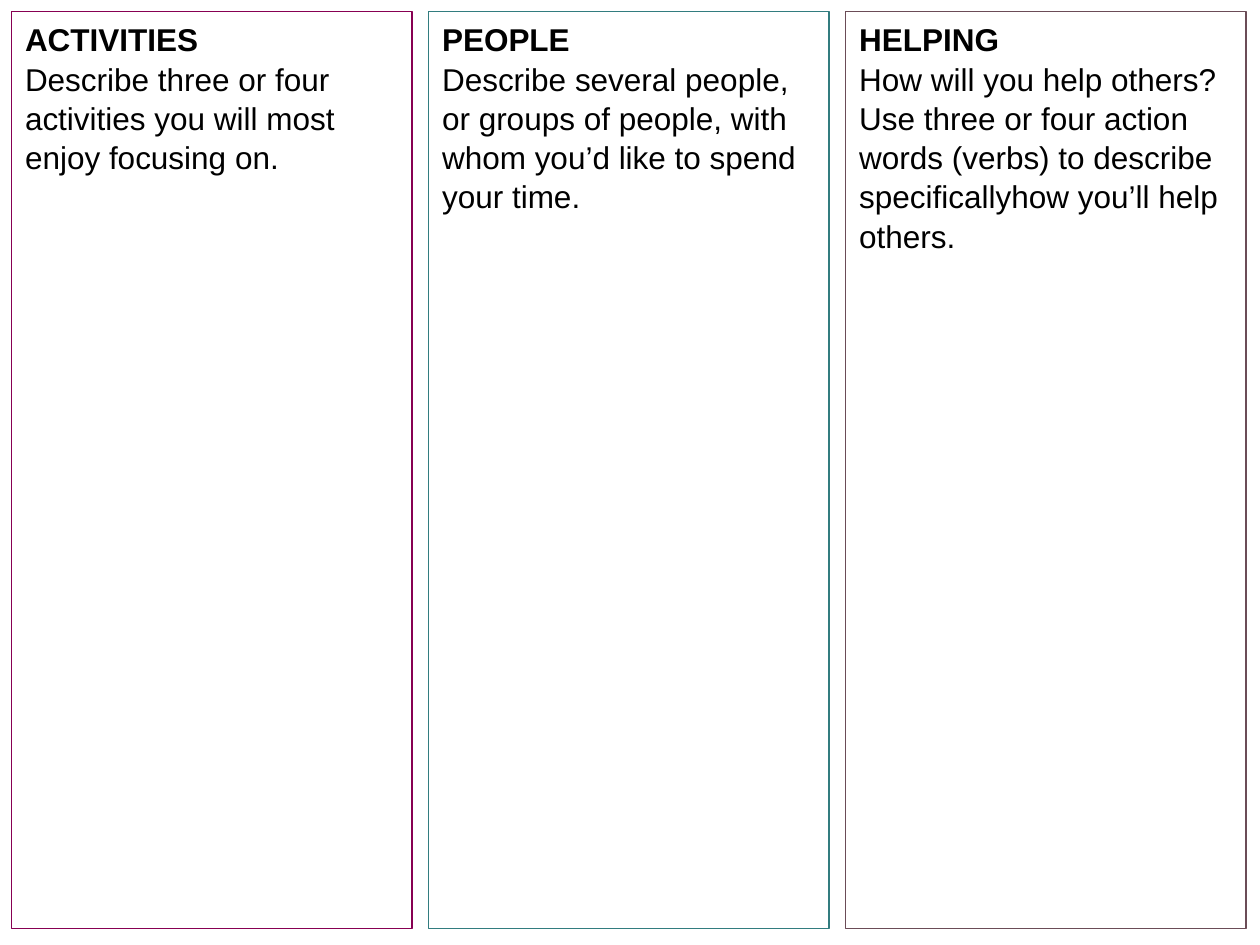
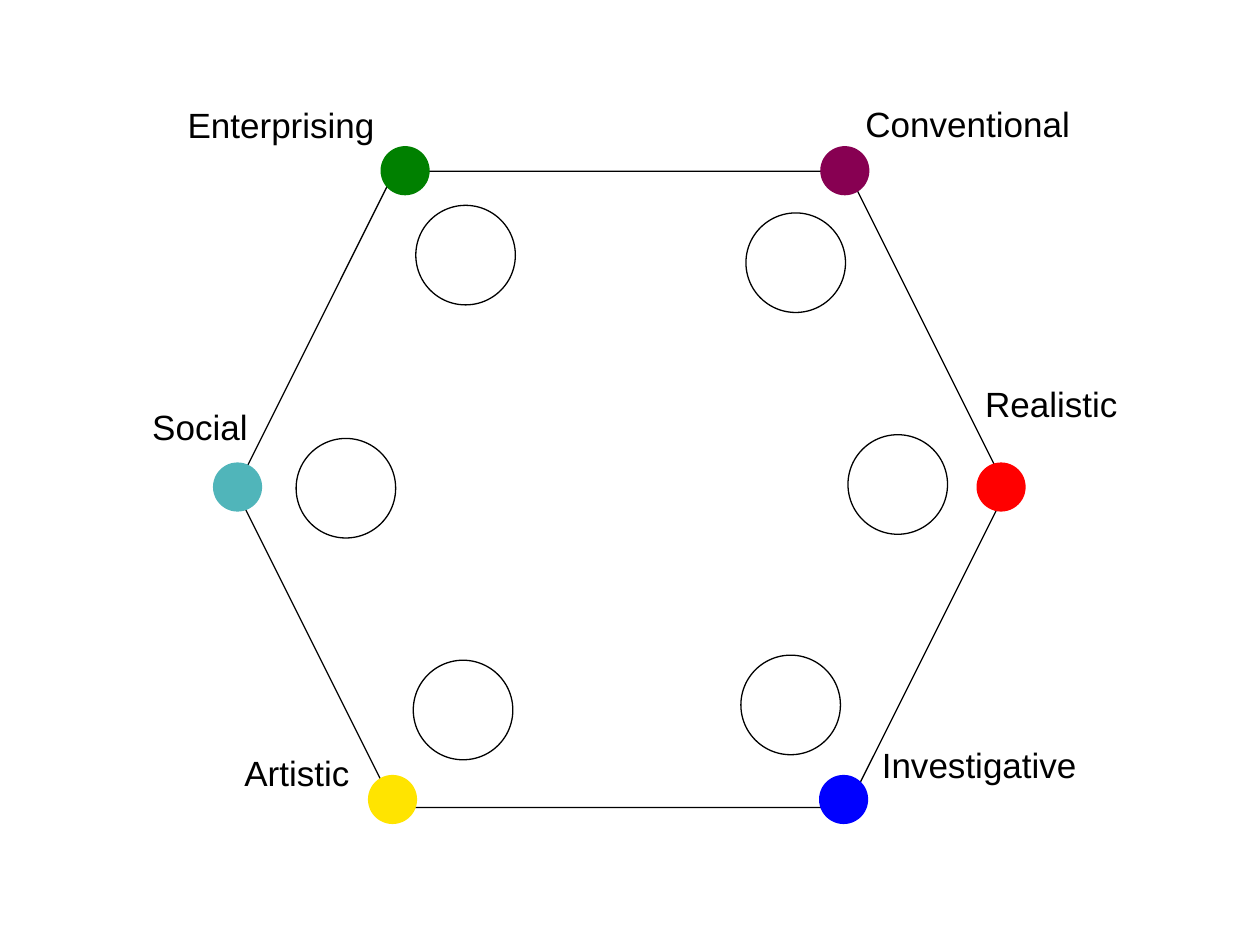
from pptx import Presentation
from pptx.dml.color import RGBColor
from pptx.enum.shapes import MSO_SHAPE as Shape
from pptx.enum.text import MSO_AUTO_SIZE as AutoSize
from pptx.util import Emu, Pt

EMU_PER_PX = 9144  # 100 px to the inch
SLIDE_W, SLIDE_H = 1000, 750
FONT = "Arial"
BLACK, WHITE = "000000", "FFFFFF"
LINE_SPACING = 1.04

COLUMN_LEFT, COLUMN_TOP, COLUMN_PITCH = 9, 9, 331
COLUMN_W, COLUMN_H = 318, 728
PROMPT_W = 308
DOT, RING = 39, 79
LABEL_W, LABEL_H = 209, 44

# heading, prompt, border colour, prompt height
COLUMNS = [
    ("ACTIVITIES", "Describe three or four activities you will most enjoy focusing on.",
     "870052", 131),
    ("PEOPLE", "Describe several people, or groups of people, with whom you’d like "
     "to spend your time.", "327C7F", 162),
    ("HELPING", "How will you help others? Use three or four action words (verbs) "
     "to describe specificallyhow you’ll help others.", "6B4C57", 192),
]

# label, dot colour, then left and top of dot, ring and label
INTERESTS = [
    ("Enterprising", "008000", (302, 116), (330, 163), (139, 76)),
    ("Conventional", "870052", (651, 116), (592, 169), (677, 75)),
    ("Social", "50B5BA", (169, 367), (235, 348), (111, 316)),
    ("Realistic", "FF0000", (775, 367), (673, 345), (772, 297)),
    ("Artistic", "FFE400", (292, 615), (328, 524), (184, 590)),
    ("Investigative", "0000FF", (650, 615), (588, 520), (690, 584)),
]


def px(length):
    return Emu(length * EMU_PER_PX)


def color(hex_code):
    return RGBColor.from_string(hex_code)


def add_figure(slide, preset, left, top, width, height, fill=None, line=None):
    figure = slide.shapes.add_shape(preset, px(left), px(top), px(width), px(height))
    figure.shadow.inherit = False
    if fill:
        figure.fill.solid()
        figure.fill.fore_color.rgb = color(fill)
    else:
        figure.fill.background()
    if line:
        figure.line.color.rgb = color(line)
        figure.line.width = Pt(0.75)
    else:
        figure.line.fill.background()


def add_text(slide, left, top, width, height, lines, size):
    """Add a text box; lines holds (text, bold) pairs, one per paragraph."""
    box = slide.shapes.add_textbox(px(left), px(top), px(width), px(height))
    frame = box.text_frame
    frame.word_wrap = True
    frame.auto_size = AutoSize.SHAPE_TO_FIT_TEXT
    for index, (text, bold) in enumerate(lines):
        paragraph = frame.add_paragraph() if index else frame.paragraphs[0]
        paragraph.text = text
        paragraph.line_spacing = LINE_SPACING
        font = paragraph.font
        font.name, font.size, font.bold = FONT, Pt(size), bold
        font.color.rgb = color(BLACK)


def add_slide(prs):
    """Add a blank slide with the shared white backdrop."""
    slide = prs.slides.add_slide(prs.slide_layouts[6])
    add_figure(slide, Shape.RECTANGLE, 0, 0, SLIDE_W, SLIDE_H, WHITE, WHITE)
    return slide


def add_planning_columns(slide):
    for index, (heading, prompt, border, prompt_h) in enumerate(COLUMNS):
        left = COLUMN_LEFT + index * COLUMN_PITCH
        add_figure(slide, Shape.RECTANGLE, left, COLUMN_TOP, COLUMN_W, COLUMN_H,
                   line=border)
        add_text(slide, left + 1, COLUMN_TOP + 1, PROMPT_W, prompt_h,
                 [(heading, True), (prompt, False)], 18)


def add_interest_hexagon(slide):
    add_figure(slide, Shape.HEXAGON, 187, 136, 612, 505, line=BLACK)
    for label, dot_color, dot_at, ring_at, label_at in INTERESTS:
        add_figure(slide, Shape.OVAL, *dot_at, DOT, DOT, fill=dot_color)
        add_figure(slide, Shape.OVAL, *ring_at, RING, RING, line=BLACK)
        add_text(slide, *label_at, LABEL_W, LABEL_H, [(label, False)], 20)


def main():
    prs = Presentation()
    prs.slide_width, prs.slide_height = px(SLIDE_W), px(SLIDE_H)
    add_planning_columns(add_slide(prs))
    add_interest_hexagon(add_slide(prs))
    prs.save("out.pptx")


if __name__ == "__main__":
    main()
